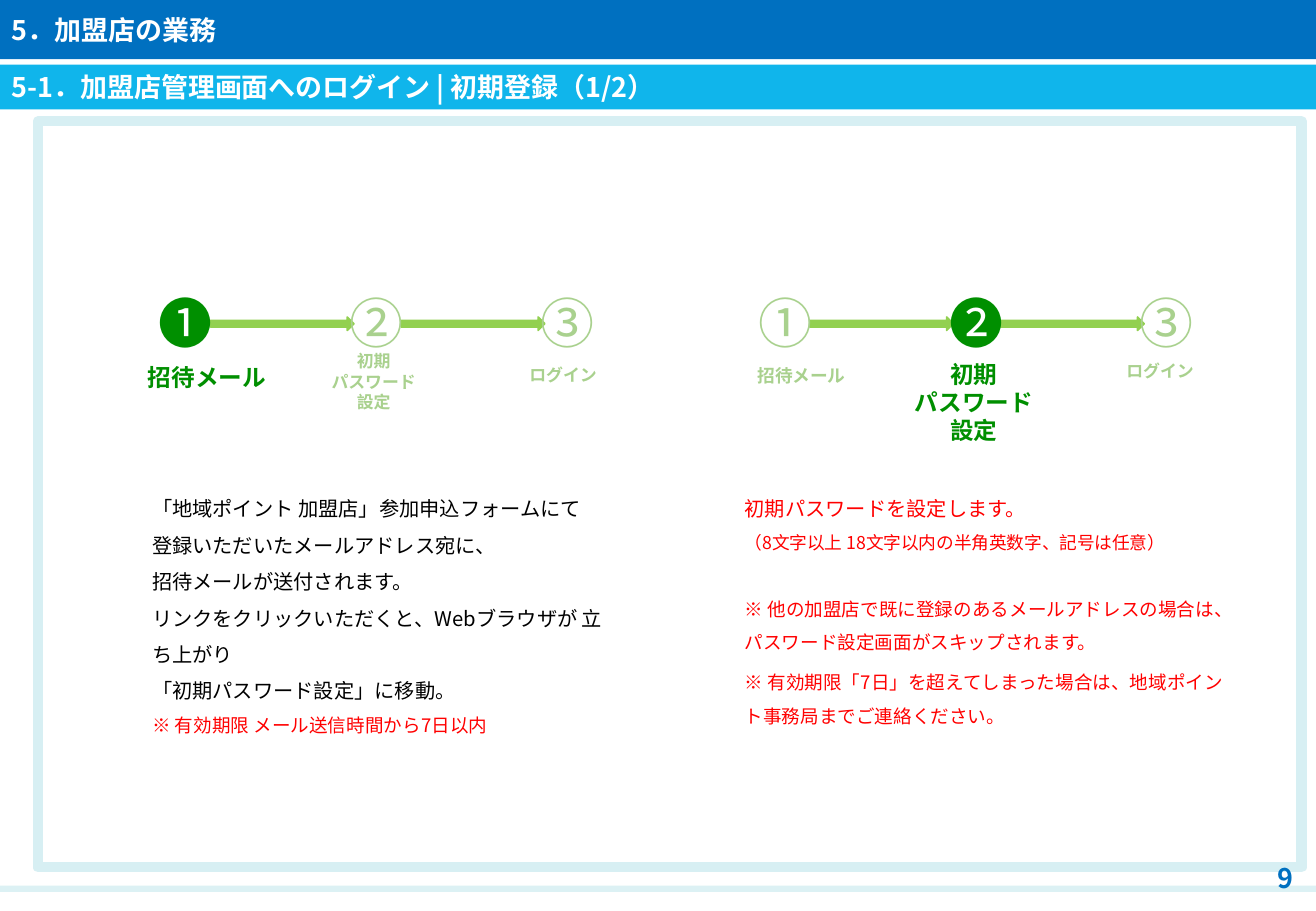
from lxml.etree import SubElement
from pptx import Presentation
from pptx.dml.color import RGBColor
from pptx.enum.shapes import MSO_SHAPE as Geo
from pptx.enum.text import MSO_ANCHOR as Anchor, PP_ALIGN as Align
from pptx.oxml.ns import qn
from pptx.util import Cm, Pt


class Theme:
    face = "Noto Sans CJK JP"
    navy, sky, pale = "0070C0", "10B5EB", "D7EFF3"
    on, off, arrow = "008F00", "A9D18E", "92D050"
    ink, alert, white = "000000", "FF0000", "FFFFFF"
    title, mark, active = 16, 32, 14
    idle, mid, note, body = 10, 10.5, 11, 12


WIDE, HIGH = 27.51, 19.05
PITCH = 3.99


def color(code):
    return RGBColor.from_string(code)


def write(frame, text, size, ink, bold=False, align=Align.LEFT,
          anchor=Anchor.TOP, inset=None, wrap=True, lead=None):
    """Fill a frame; text is a string or a list of (text, style) pairs."""
    frame.word_wrap, frame.vertical_anchor = wrap, anchor
    if inset is not None:
        frame.margin_left = frame.margin_right = Cm(inset)
        frame.margin_top = frame.margin_bottom = Cm(inset)
    lines = [(text, {})] if isinstance(text, str) else text
    for i, (words, style) in enumerate(lines):
        para = frame.paragraphs[0] if i == 0 else frame.add_paragraph()
        para.alignment = align
        if lead:
            para.line_spacing = lead
        if "before" in style:
            para.space_before = Pt(style["before"])
        run = para.add_run()
        run.text = words
        font = run.font
        font.name, font.bold = Theme.face, bold
        font.size = Pt(style.get("size", size))
        font.color.rgb = color(style.get("ink", ink))
        SubElement(font._element, qn("a:ea"), typeface=Theme.face)


def add_text(slide, box, text, size, ink, **style):
    frame = slide.shapes.add_textbox(*map(Cm, box)).text_frame
    write(frame, text, size, ink, **style)


def add_block(slide, box, fill=None, line=None, width=1, geo=Geo.RECTANGLE):
    block = slide.shapes.add_shape(geo, *map(Cm, box))
    block.shadow.inherit = False
    if fill:
        block.fill.solid()
        block.fill.fore_color.rgb = color(fill)
    else:
        block.fill.background()
    if line:
        block.line.color.rgb = color(line)
        block.line.width = Pt(width)
    else:
        block.line.fill.background()
    return block


def add_bar(slide, box, text, fill):
    bar = add_block(slide, box, fill)
    write(bar.text_frame, text, Theme.title, Theme.white, bold=True,
          anchor=Anchor.MIDDLE)


def add_base(slide, page):
    """Place the footer rule, the content frame and the page number."""
    rule = add_block(slide, (0, 18.52, WIDE, 0.13), Theme.pale)
    tint = rule.fill._xPr.find(".//" + qn("a:srgbClr"))
    SubElement(tint, qn("a:alpha"), val="85000")
    add_block(slide, (0.79, 2.54, 26.42, 15.6), line=Theme.pale, width=6)
    add_text(slide, (21.74, 17.98, 5.54, 0.74), page, Theme.title, Theme.navy,
             bold=True, align=Align.RIGHT, anchor=Anchor.MIDDLE)


def add_flow(slide, left, top, marks, labels):
    """Draw numbered steps; each label is (lines, size, ink, dx, dy)."""
    for i in range(len(marks) - 1):
        add_block(slide, (left + 1.33 + i * PITCH, top + 0.69, 3, 0.28),
                  Theme.arrow, Theme.arrow, geo=Geo.RIGHT_ARROW)
    for i, (mark, label) in enumerate(zip(marks, labels)):
        lines, size, ink, dx, dy = label
        x = left + i * PITCH
        add_text(slide, (x, top, 1.65, 1.63), mark, Theme.mark, ink, wrap=False)
        add_text(slide, (x + dx, top + dy, 2.82, 0.5 * len(lines)),
                 [(line, {}) for line in lines], size, ink, bold=True,
                 align=Align.CENTER, inset=0)


def add_body(slide, box, lines, ink):
    add_text(slide, box, lines, Theme.body, ink, inset=0, lead=1.5)


def main():
    deck = Presentation()
    deck.slide_width, deck.slide_height = Cm(WIDE), Cm(HIGH)
    slide = deck.slides.add_slide(deck.slide_layouts[6])
    add_base(slide, "9")
    add_bar(slide, (0, 0, WIDE, 1.24), "5．加盟店の業務", Theme.navy)
    add_bar(slide, (0, 1.35, WIDE, 0.94),
            "5-1．加盟店管理画面へのログイン | 初期登録（1/2）", Theme.sky)

    mail, login = ["招待メール"], ["ログイン"]
    setup = ["初期", "パスワード", "設定"]
    on, off = Theme.on, Theme.off
    add_flow(slide, 3.07, 5.94, "❶②③", [
        (mail, Theme.active, on, -0.15, 1.65),
        (setup, Theme.idle, off, -0.66, 1.4),
        (login, Theme.idle, off, -0.69, 1.68)])
    add_flow(slide, 15.6, 5.94, "①❷③", [
        (mail, Theme.mid, off, -0.25, 1.68),
        (setup, Theme.active, on, -0.64, 1.58),
        (login, Theme.idle, off, -0.74, 1.6)])

    note = {"size": Theme.note}
    add_body(slide, (3.18, 10.13, 9.53, 4.45), [
        ("「地域ポイント 加盟店」参加申込フォームにて", {}),
        ("登録いただいたメールアドレス宛に、", {}),
        ("招待メールが送付されます。", {}),
        ("リンクをクリックいただくと、Webブラウザが 立ち上がり", {}),
        ("「初期パスワード設定」に移動。", {}),
        ("※ 有効期限 メール送信時間から7日以内",
         {**note, "ink": Theme.alert})], Theme.ink)
    add_body(slide, (15.57, 10.13, 10.08, 5), [
        ("初期パスワードを設定します。", {}),
        ("（8文字以上 18文字以内の半角英数字、記号は任意）",
         {"size": Theme.mid}),
        ("※ 他の加盟店で既に登録のあるメールアドレスの場合は、"
         "パスワード設定画面がスキップされます。", {**note, "before": 20}),
        ("※ 有効期限「7日」を超えてしまった場合は、"
         "地域ポイント事務局までご連絡ください。", {**note, "before": 4})],
        Theme.alert)
    deck.save("out.pptx")


if __name__ == "__main__":
    main()
